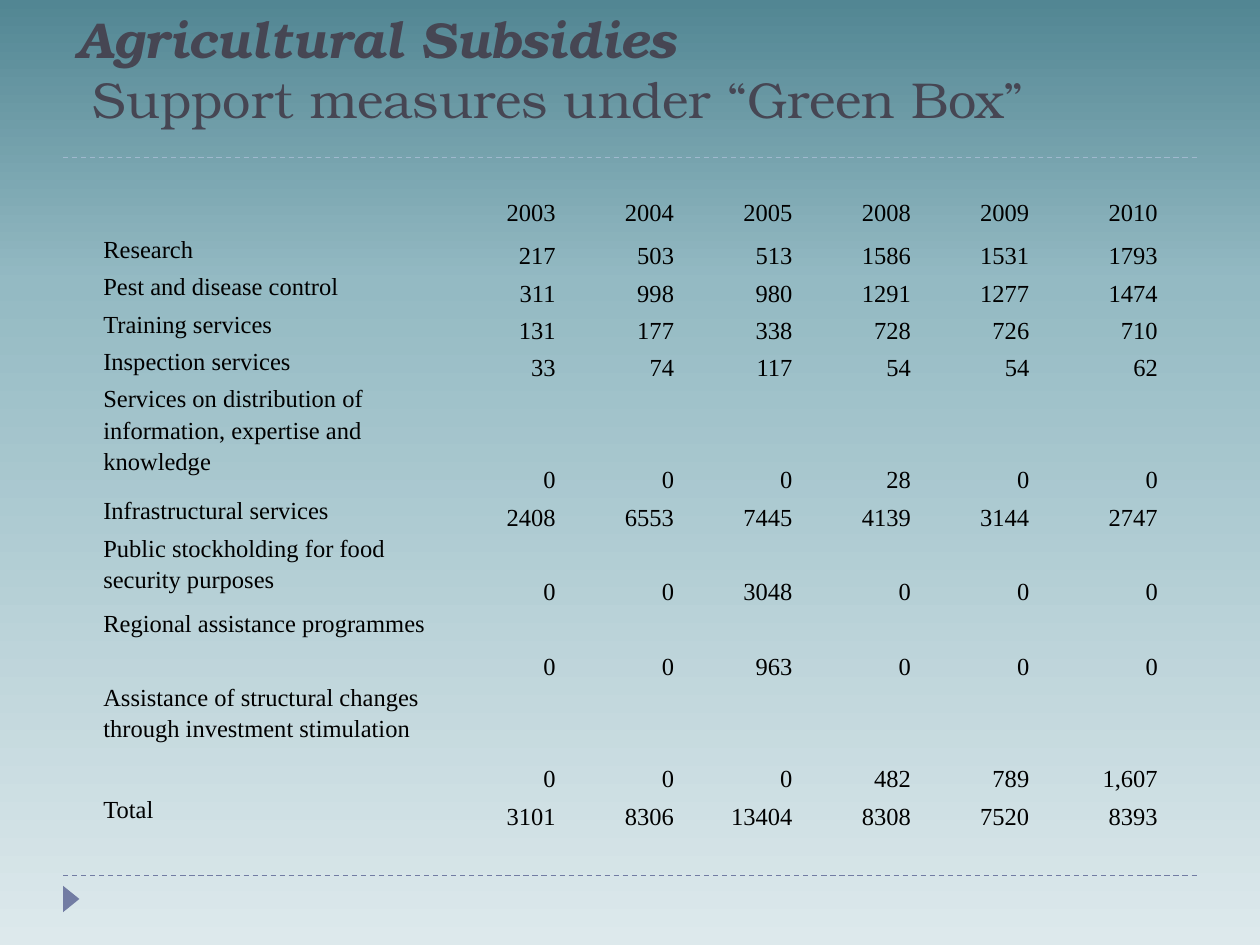
from copy import deepcopy
from dataclasses import dataclass

from lxml.etree import SubElement
from pptx import Presentation
from pptx.dml.color import RGBColor
from pptx.enum.dml import MSO_LINE
from pptx.enum.shapes import MSO_CONNECTOR, MSO_SHAPE
from pptx.enum.text import MSO_ANCHOR, PP_ALIGN
from pptx.oxml.ns import qn
from pptx.slide import Slide
from pptx.table import _Cell
from pptx.util import Inches, Pt

INK = RGBColor(0x46, 0x46, 0x53)
BLACK = RGBColor(0x00, 0x00, 0x00)
INDIGO = RGBColor(0x72, 0x7C, 0xA3)
PALE_BLUE = RGBColor(0x9F, 0xB8, 0xCD)
GRADIENT = (
    (0.0, RGBColor(0x52, 0x86, 0x93)),
    (0.3, RGBColor(0x94, 0xBA, 0xC3)),
    (1.0, RGBColor(0xDD, 0xE9, 0xEC)),
)
TITLE_FONT = "TeX Gyre Bonum"
TABLE_FONT = "Times New Roman"
NO_GRID_STYLE = "{2D5ABB26-0587-4C30-8999-92F81FD0307C}"


@dataclass(frozen=True)
class Rule:
    top: float
    color: RGBColor


@dataclass(frozen=True)
class Measure:
    label: str
    values: str
    lines: int = 1


RULES = (Rule(6.95, INDIGO), Rule(1.25, PALE_BLUE))
MEASURES = (
    Measure("", "2003 2004 2005 2008 2009 2010"),
    Measure("Research", "217 503 513 1586 1531 1793"),
    Measure("Pest and disease control", "311 998 980 1291 1277 1474"),
    Measure("Training services", "131 177 338 728 726 710"),
    Measure("Inspection services", "33 74 117 54 54 62"),
    Measure("Services on distribution of information, expertise and knowledge", "0 0 0 28 0 0", 3),
    Measure("Infrastructural services", "2408 6553 7445 4139 3144 2747"),
    Measure("Public stockholding for food security purposes", "0 0 3048 0 0 0", 2),
    Measure("Regional assistance programmes", "0 0 963 0 0 0", 2),
    Measure("Assistance of structural changes through investment stimulation", "0 0 0 482 789 1,607", 3),
    Measure("Total", "3101 8306 13404 8308 7520 8393"),
)
COLUMN_WIDTHS = (2.79, *[0.94] * 5, 1.02)
TABLE_HEIGHT = 5.04


def paint_background(page: Slide) -> None:
    fill = page.background.fill
    fill.gradient()
    fill.gradient_angle = 270
    stop_list = page.background._cSld.find(".//" + qn("a:gsLst"))
    stop_list.append(deepcopy(stop_list[0]))
    for stop, (position, color) in zip(fill.gradient_stops, GRADIENT):
        stop.position = position
        stop.color.rgb = color


def draw_rule(page: Slide, rule: Rule) -> None:
    line = page.shapes.add_connector(
        MSO_CONNECTOR.STRAIGHT, Inches(0.5), Inches(rule.top), Inches(9.5), Inches(rule.top)
    )
    line.line.color.rgb = rule.color
    line.line.width = Pt(0.75)
    line.line.dash_style = MSO_LINE.DASH
    SubElement(line._element.spPr, qn("a:effectLst"))


def draw_marker(page: Slide) -> None:
    marker = page.shapes.add_shape(
        MSO_SHAPE.ISOSCELES_TRIANGLE, Inches(0.46), Inches(7.07), Inches(0.21), Inches(0.13)
    )
    marker.rotation = 90
    marker.shadow.inherit = False
    marker.fill.solid()
    marker.fill.fore_color.rgb = INDIGO
    marker.line.fill.background()


def draw_title(page: Slide) -> None:
    box = page.shapes.add_textbox(Inches(0.51), Inches(0), Inches(9), Inches(1.07))
    frame = box.text_frame
    frame.word_wrap = True
    frame.vertical_anchor = MSO_ANCHOR.BOTTOM
    frame.text = "Agricultural Subsidies\nSupport measures under “Green Box”"
    heading, subtitle = frame.paragraphs
    subtitle._p.get_or_add_pPr().set("marL", str(Inches(0.13)))
    for para in (heading, subtitle):
        font = para.runs[0].font
        font.name = TITLE_FONT
        font.size = Pt(28.8)
        font.color.rgb = INK
        font.bold = font.italic = para is heading


def fill_cell(cell: _Cell, text: str, align: PP_ALIGN, anchor: MSO_ANCHOR) -> None:
    cell.fill.background()
    cell.margin_left = cell.margin_right = Inches(0.07)
    cell.margin_top = cell.margin_bottom = Inches(0)
    cell.vertical_anchor = anchor
    para = cell.text_frame.paragraphs[0]
    para.text = text
    para.alignment = align
    para.line_spacing = 1.15
    for span in para.runs:
        span.font.name = TABLE_FONT
        span.font.size = Pt(14)
        span.font.color.rgb = BLACK
    if not text:
        SubElement(para._p, qn("a:endParaRPr")).set("sz", "1400")


def draw_table(page: Slide) -> None:
    table = page.shapes.add_table(
        len(MEASURES), len(COLUMN_WIDTHS),
        Inches(0.75), Inches(1.55), Inches(8.5), Inches(TABLE_HEIGHT),
    ).table
    table.first_row = table.horz_banding = False
    table._tbl.tblPr.find(qn("a:tableStyleId")).text = NO_GRID_STYLE
    for column, width in zip(table.columns, COLUMN_WIDTHS):
        column.width = Inches(width)
    line_height = TABLE_HEIGHT / sum(measure.lines for measure in MEASURES)
    for index, measure in enumerate(MEASURES):
        table.rows[index].height = Inches(line_height * measure.lines)
        fill_cell(table.cell(index, 0), measure.label, PP_ALIGN.LEFT, MSO_ANCHOR.TOP)
        anchor = MSO_ANCHOR.BOTTOM if index else MSO_ANCHOR.TOP
        for column, value in enumerate(measure.values.split(), start=1):
            fill_cell(table.cell(index, column), value, PP_ALIGN.RIGHT, anchor)


def main() -> None:
    deck = Presentation()
    deck.slide_width = Inches(10)
    deck.slide_height = Inches(7.5)
    page = deck.slides.add_slide(deck.slide_layouts[6])
    paint_background(page)
    for rule in RULES:
        draw_rule(page, rule)
    draw_marker(page)
    draw_title(page)
    draw_table(page)
    deck.save("out.pptx")


if __name__ == "__main__":
    main()
